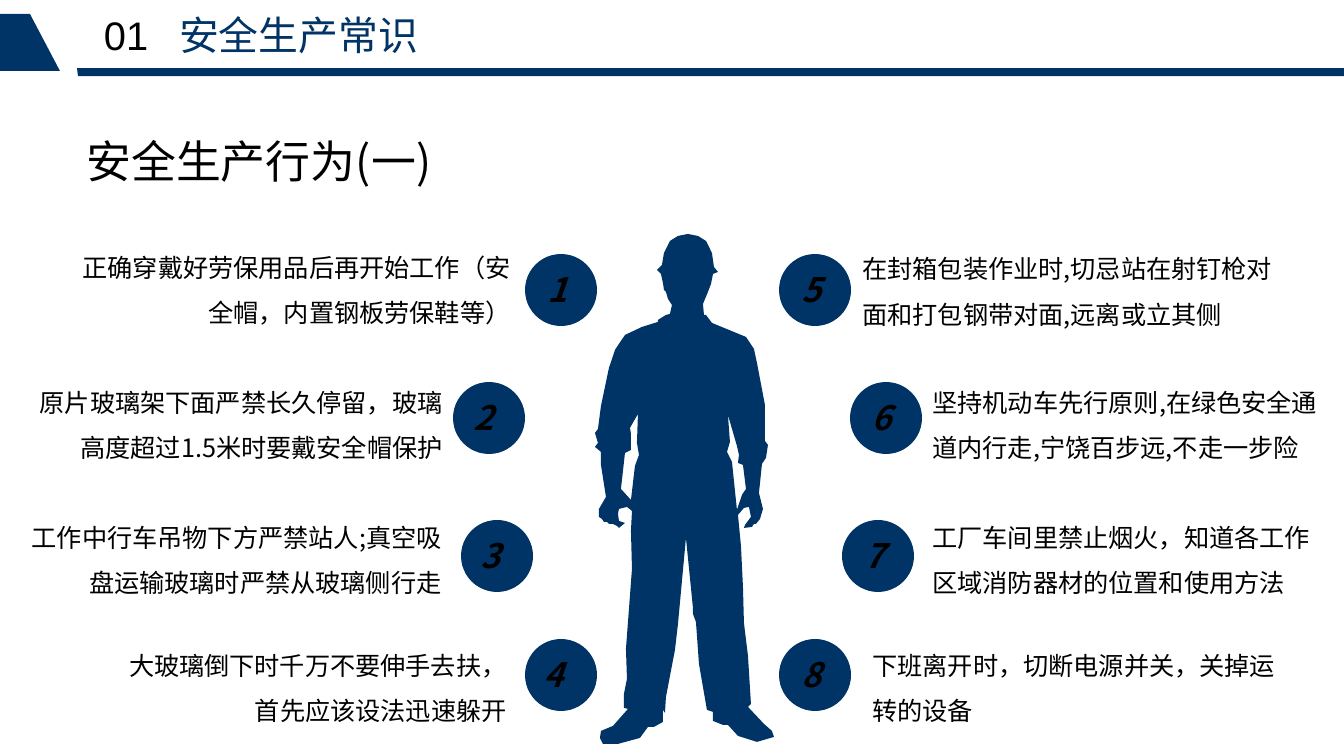
from pptx import Presentation
from pptx.dml.color import RGBColor
from pptx.enum.shapes import MSO_SHAPE
from pptx.enum.text import MSO_ANCHOR, MSO_AUTO_SIZE, PP_ALIGN
from pptx.oxml.ns import qn
from pptx.util import Pt
from lxml import etree

OVAL = MSO_SHAPE.OVAL
TOP, MIDDLE = MSO_ANCHOR.TOP, MSO_ANCHOR.MIDDLE
LEFT, RIGHT = PP_ALIGN.LEFT, PP_ALIGN.RIGHT
NO_AUTOFIT = MSO_AUTO_SIZE.NONE

PX = 9565  # EMU per px
COLORS = {"navy": "003366", "black": "000000"}
CJK, LATIN = "Noto Sans CJK SC", "Arial"


def paint(shape):
    shape.shadow.inherit = False
    shape.fill.solid()
    shape.fill.fore_color.rgb = RGBColor.from_string(COLORS["navy"])
    shape.line.fill.background()


def add_text(paragraph, text, size, color="black", font=CJK, strong=False):
    run = paragraph.add_run()
    run.text = text
    run.font.size = Pt(size)
    run.font.name = font
    run.font.color.rgb = RGBColor.from_string(COLORS[color])
    if strong:
        run.font.bold = run.font.italic = True
    east_asian = etree.SubElement(run.font._element, qn("a:ea"))
    east_asian.set("typeface", font)


prs = Presentation()
prs.slide_width, prs.slide_height = 1344 * PX, 756 * PX
slide = prs.slides.add_slide(prs.slide_layouts[5])
shapes = slide.shapes

# Worker silhouette: body, then the gaps inside both arms
worker_body = [
    # helmet and left side of the face
    (713, 274), (718, 272), (714, 267), (712, 253), (706, 241), (698, 236),
    (688, 234), (678, 236), (670, 241), (664, 253), (662, 265), (657, 270),
    (661, 274), (663, 283), (664, 290), (666, 292), (668, 299), (672, 305),
    # left shoulder, arm and hand
    (670, 314), (666, 315), (658, 320), (658, 322), (642, 327), (625, 335),
    (615, 350), (609, 368), (601, 406), (598, 429), (595, 433), (598, 443),
    (595, 447), (601, 452), (601, 465), (606, 497), (599, 509), (599, 517),
    (602, 519), (604, 522), (607, 522), (609, 524), (613, 524), (617, 526),
    (619, 528), (625, 523), (619, 521), (618, 514), (619, 509), (627, 507),
    # left leg and shoe
    (632, 511), (631, 531), (632, 569), (626, 649), (627, 679), (624, 694),
    (624, 708), (628, 709), (613, 726), (601, 731), (600, 738), (603, 744),
    (618, 744), (640, 738), (648, 727), (654, 727), (663, 722), (663, 710),
    (665, 713), (666, 697), (675, 650), (678, 624), (686, 538),
    # right leg and shoe
    (693, 608), (693, 614), (696, 622), (699, 664), (707, 710), (713, 712),
    (713, 721), (723, 725), (728, 725), (738, 736), (757, 742), (774, 737),
    (772, 731), (764, 724), (748, 707), (751, 704), (748, 656), (744, 623),
    (743, 587), (741, 546), (738, 515),
    # right hand, arm and shoulder
    (744, 508), (749, 507), (751, 517), (745, 525), (744, 528), (752, 527),
    (754, 524), (756, 524), (760, 519), (763, 509), (759, 493), (762, 464),
    (766, 458), (768, 445), (765, 441), (765, 405), (757, 363), (754, 349),
    (746, 337), (712, 323), (706, 315), (704, 315), (703, 304), (708, 292),
    (711, 284),
]
right_arm_gap = [
    (737, 510), (732, 462), (727, 452), (730, 442), (728, 415), (737, 446),
    (739, 455), (738, 463), (743, 465), (746, 489), (742, 495),
]
left_arm_gap = [
    (638, 414), (630, 428), (631, 434), (631, 450), (625, 453), (621, 489),
    (631, 500), (635, 466), (639, 455), (637, 443),
]
header_block = [(0, 14), (30, 14), (60, 71), (0, 71)]
header_bar = [(77, 68), (1344, 68), (1344, 76), (78, 76)]

for contours in ([worker_body, right_arm_gap, left_arm_gap],
                 [header_block], [header_bar]):
    outline = shapes.build_freeform(*contours[0][0], scale=PX)
    outline.add_line_segments(contours[0][1:], close=True)
    for gap in contours[1:]:
        outline.move_to(*gap[0])
        outline.add_line_segments(gap[1:], close=True)
    paint(outline.convert_to_shape())

# Eight rules: circle left, digit left, rule left, rule top, rule width, text
CIRCLE_TOPS = [254, 382, 520, 639]
rules = [
    (525, 538, 56, 232, 464, "正确穿戴好劳保用品后再开始工作（安全帽，内置钢板劳保鞋等）"),
    (453, 464, 28, 367, 424, "原片玻璃架下面严禁长久停留，玻璃高度超过1.5米时要戴安全帽保护"),
    (461, 471, 16, 502, 435, "工作中行车吊物下方严禁站人;真空吸盘运输玻璃时严禁从玻璃侧行走"),
    (525, 534, 107, 630, 409, "大玻璃倒下时千万不要伸手去扶，首先应该设法迅速躲开"),
    (779, 792, 853, 234, 430, "在封箱包装作业时,切忌站在射钉枪对面和打包钢带对面,远离或立其侧"),
    (850, 862, 923, 367, 420, "坚持机动车先行原则,在绿色安全通道内行走,宁饶百步远,不走一步险"),
    (842, 855, 923, 502, 414, "工厂车间里禁止烟火，知道各工作区域消防器材的位置和使用方法"),
    (779, 792, 863, 630, 440, "下班离开时，切断电源并关，关掉运转的设备"),
]
for index, (circle_x, digit_x, rule_x, rule_y, rule_w, rule) in enumerate(rules):
    circle_y = CIRCLE_TOPS[index % 4]
    paint(shapes.add_shape(OVAL, circle_x * PX, circle_y * PX, 72 * PX, 72 * PX))

    digit = shapes.add_textbox(digit_x * PX, (circle_y + 10) * PX, 52 * PX, 51 * PX)
    digit.text_frame.word_wrap = True
    add_text(digit.text_frame.paragraphs[0], str(index + 1), 25.3, strong=True)

    rule_box = shapes.add_textbox(rule_x * PX, rule_y * PX, rule_w * PX, 101 * PX)
    rule_box.text_frame.word_wrap = True
    rule_line = rule_box.text_frame.paragraphs[0]
    rule_line.alignment = RIGHT if index < 4 else LEFT
    rule_line.line_spacing = 1.5
    add_text(rule_line, rule, 19)

# Subheading
subheading = shapes.add_textbox(77 * PX, 129 * PX, 366 * PX, 64 * PX)
subheading.text_frame.word_wrap = True
subheading.text_frame.vertical_anchor = MIDDLE
add_text(subheading.text_frame.paragraphs[0], "安全生产行为(一)", 33.8)

# Title, with a tab stop between section number and section name
title = shapes.title
title.left, title.top, title.width, title.height = 104 * PX, 11 * PX, 820 * PX, 48 * PX
frame = title.text_frame
frame.margin_left = frame.margin_right = frame.margin_top = frame.margin_bottom = 0
frame.vertical_anchor = TOP
frame.auto_size = NO_AUTOFIT
heading = frame.paragraphs[0]
heading.alignment = LEFT
tab_stops = etree.SubElement(heading._p.get_or_add_pPr(), qn("a:tabLst"))
etree.SubElement(tab_stops, qn("a:tab"), pos=str(75 * PX), algn="l")
add_text(heading, "01\t", 30, font=LATIN)
add_text(heading, "安全生产常识", 30, "navy")

prs.save("out.pptx")
